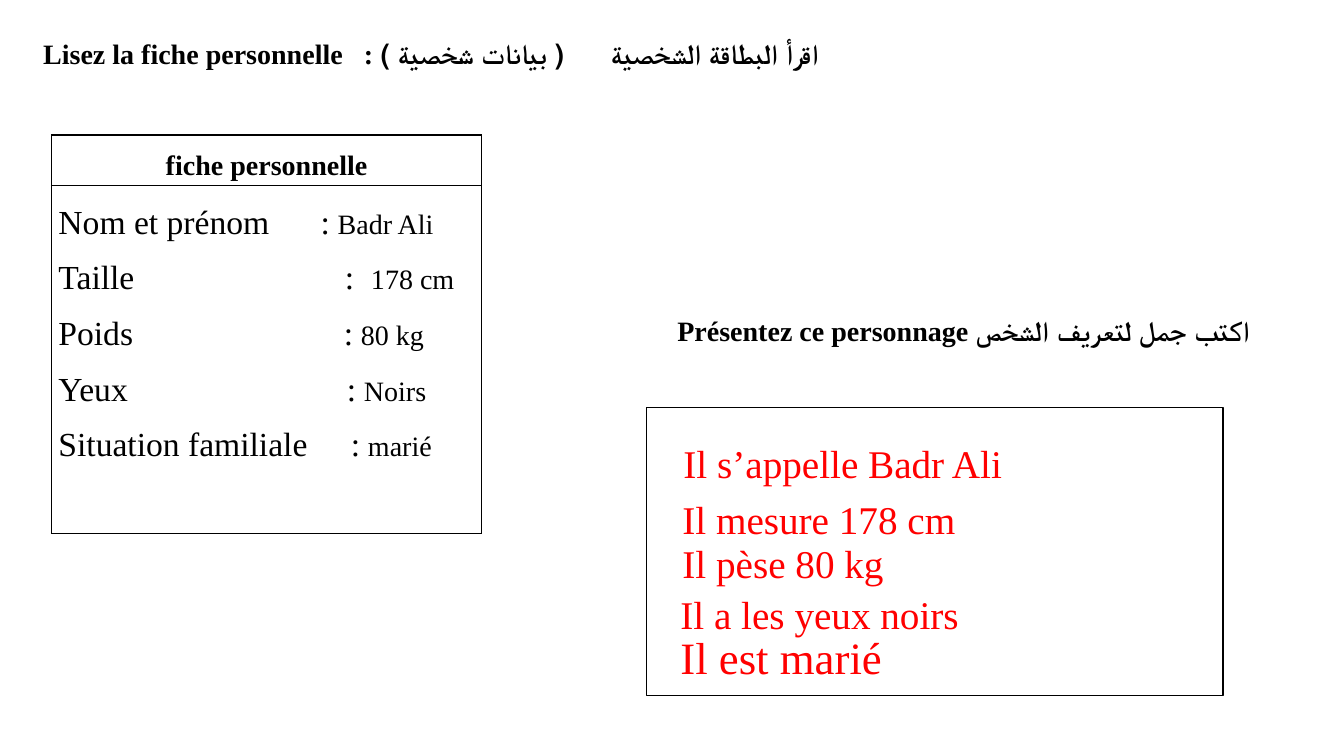
from dataclasses import dataclass

from lxml import etree
from pptx import Presentation
from pptx.dml.color import RGBColor
from pptx.enum.shapes import MSO_SHAPE
from pptx.enum.text import MSO_AUTO_SIZE, PP_ALIGN
from pptx.oxml.ns import qn
from pptx.util import Inches, Pt

RECTANGLE = MSO_SHAPE.RECTANGLE
CENTER = PP_ALIGN.CENTER
GROW = MSO_AUTO_SIZE.SHAPE_TO_FIT_TEXT


@dataclass(frozen=True)
class Theme:
    font: str = "Times New Roman"
    arabic_font: str = "Calibri"
    ink: str = "000000"
    answer: str = "FF0000"
    body: int = 20
    label: int = 24
    answer_size: int = 28
    last_answer_size: int = 32
    line: int = 1
    spacing: float = 1.5


class Worksheet:
    def __init__(self, theme):
        self.theme = theme
        self.presentation = Presentation()
        self.presentation.slide_width = Inches(13.33)
        self.presentation.slide_height = Inches(7.5)
        blank = self.presentation.slide_layouts[6]
        self.slide = self.presentation.slides.add_slide(blank)

    def add_words(self, paragraph, words, size, bold=False, color=None, font=None):
        run = paragraph.add_run()
        run.text = words
        run.font.size = Pt(size)
        run.font.bold = bold
        run.font.name = font or self.theme.font
        run.font.color.rgb = RGBColor.from_string(color or self.theme.ink)

    def text(self, left, top, width, height, wrap=True):
        """Add an empty text box and return its first paragraph."""
        box = self.slide.shapes.add_textbox(
            Inches(left), Inches(top), Inches(width), Inches(height))
        box.text_frame.word_wrap = wrap
        box.text_frame.auto_size = GROW
        return box.text_frame.paragraphs[0]

    def frame(self, left, top, width, height):
        outline = self.slide.shapes.add_shape(
            RECTANGLE, Inches(left), Inches(top), Inches(width), Inches(height))
        outline.shadow.inherit = False
        outline.fill.background()
        outline.line.color.rgb = RGBColor.from_string(self.theme.ink)
        outline.line.width = Pt(self.theme.line)

    def table(self, left, top, width, row_heights):
        """Add a plain one-column table and return its cells."""
        grid = self.slide.shapes.add_table(
            len(row_heights), 1, Inches(left), Inches(top),
            Inches(width), Inches(sum(row_heights))).table
        grid.first_row = grid.horz_banding = False
        for row, height in zip(grid.rows, row_heights):
            row.height = Inches(height)
        cells = [row.cells[0] for row in grid.rows]
        for cell in cells:
            cell.margin_left = cell.margin_right = Inches(0.07)
            cell.margin_top = cell.margin_bottom = 0
            self.border(cell)
            cell.fill.background()
        return cells

    def border(self, cell):
        properties = cell._tc.get_or_add_tcPr()
        for side in ("a:lnL", "a:lnR", "a:lnT", "a:lnB"):
            edge = etree.SubElement(
                properties, qn(side), w=str(Pt(self.theme.line)))
            fill = etree.SubElement(edge, qn("a:solidFill"))
            etree.SubElement(fill, qn("a:srgbClr"), val=self.theme.ink)

    def tab_stops(self, paragraph, stops):
        tabs = etree.SubElement(
            paragraph._p.get_or_add_pPr(), qn("a:tabLst"))
        for stop in stops:
            etree.SubElement(
                tabs, qn("a:tab"), pos=str(Inches(stop)), algn="l")


# Label, value, and the tab stops of the colon and the value
DETAILS = [
    ("Nom et prénom", "Badr Ali", (2.6, 2.77)),
    ("Taille", "178 cm", (2.84, 3.1)),
    ("Poids", "80 kg", (2.83, 3.0)),
    ("Yeux", "Noirs", (2.86, 3.03)),
    ("Situation familiale", "marié", (2.9, 3.07)),
]


def main():
    theme = Theme()
    sheet = Worksheet(theme)

    heading = sheet.text(0.33, 0.31, 8.47, 0.44)
    sheet.add_words(heading, "Lisez la fiche personnelle   : ", theme.body, True)
    sheet.add_words(heading, "اقرأ البطاقة الشخصية      ( بيانات شخصية )",
                    theme.body, True, font=theme.arabic_font)

    title_cell, details_cell = sheet.table(0.51, 1.34, 4.27, (0.5, 3.45))
    card_title = title_cell.text_frame.paragraphs[0]
    card_title.alignment = CENTER
    card_title.line_spacing = theme.spacing
    sheet.add_words(card_title, "fiche personnelle", theme.body, True)

    for index, (label, value, stops) in enumerate(DETAILS):
        details = details_cell.text_frame
        detail = details.add_paragraph() if index else details.paragraphs[0]
        detail.line_spacing = theme.spacing
        sheet.tab_stops(detail, stops)
        sheet.add_words(detail, f"{label}\t:\t", theme.label)
        sheet.add_words(detail, value, theme.body)

    task = sheet.text(6.06, 2.89, 6.76, 0.54)
    task.line_spacing = theme.spacing
    task._p.get_or_add_pPr().set("marL", str(Inches(0.56)))
    sheet.add_words(task, "Présentez ce personnage اكتب جمل لتعريف الشخص",
                    theme.body, True)

    sheet.frame(6.41, 4.04, 5.72, 2.86)
    answers = [
        ("Il s’appelle Badr Ali", 6.68, 4.31, 3.49, theme.answer_size),
        ("Il mesure 178 cm", 6.67, 4.86, 2.94, theme.answer_size),
        ("Il pèse 80 kg", 6.67, 5.3, 2.22, theme.answer_size),
        ("Il a les yeux noirs", 6.65, 5.81, 3.19, theme.answer_size),
        ("Il est marié", 6.65, 6.2, 2.56, theme.last_answer_size),
    ]
    for sentence, left, top, width, size in answers:
        answer = sheet.text(left, top, width, 0.88, wrap=False)
        sheet.add_words(answer, sentence, size, color=theme.answer)

    sheet.presentation.save("out.pptx")


if __name__ == "__main__":
    main()
